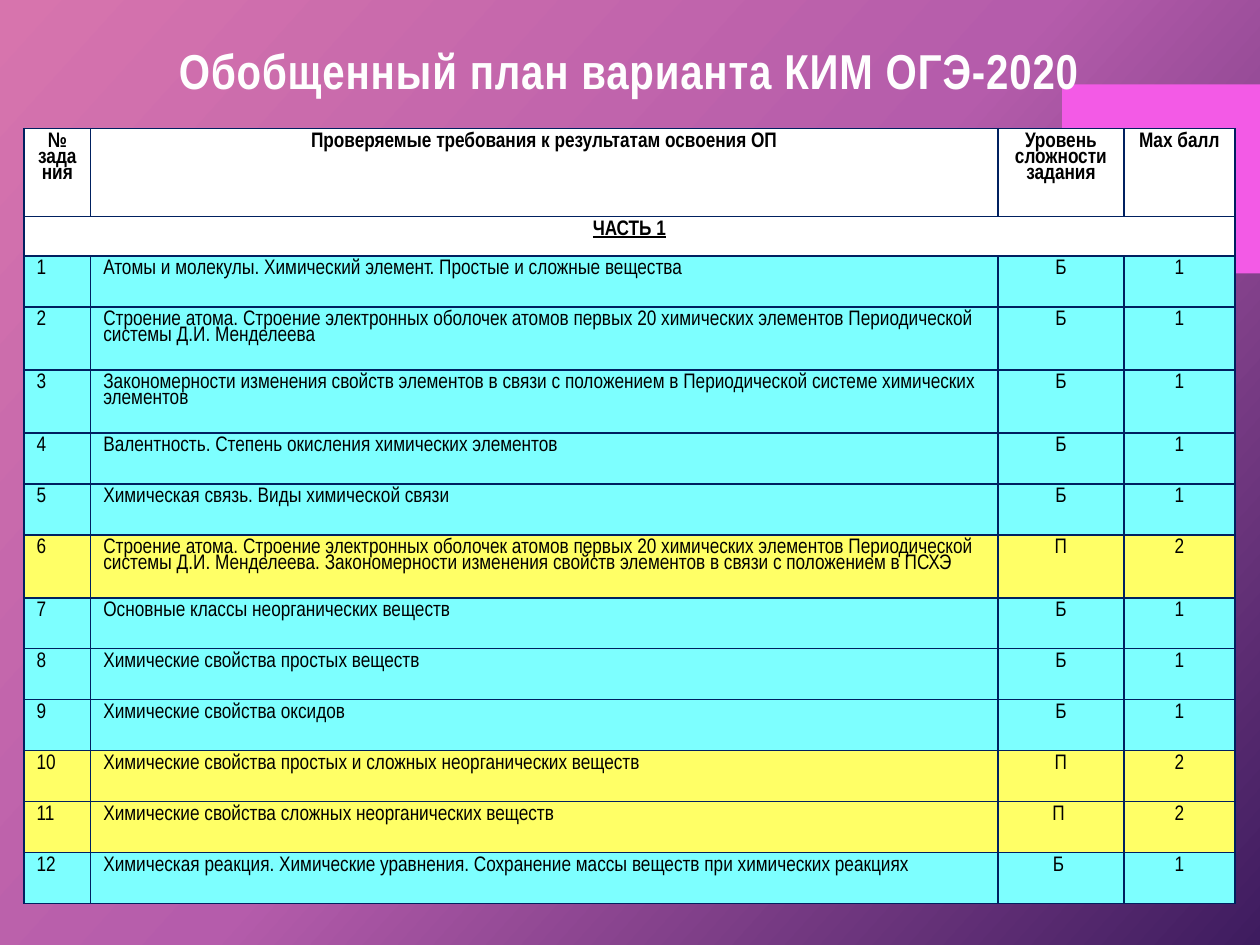
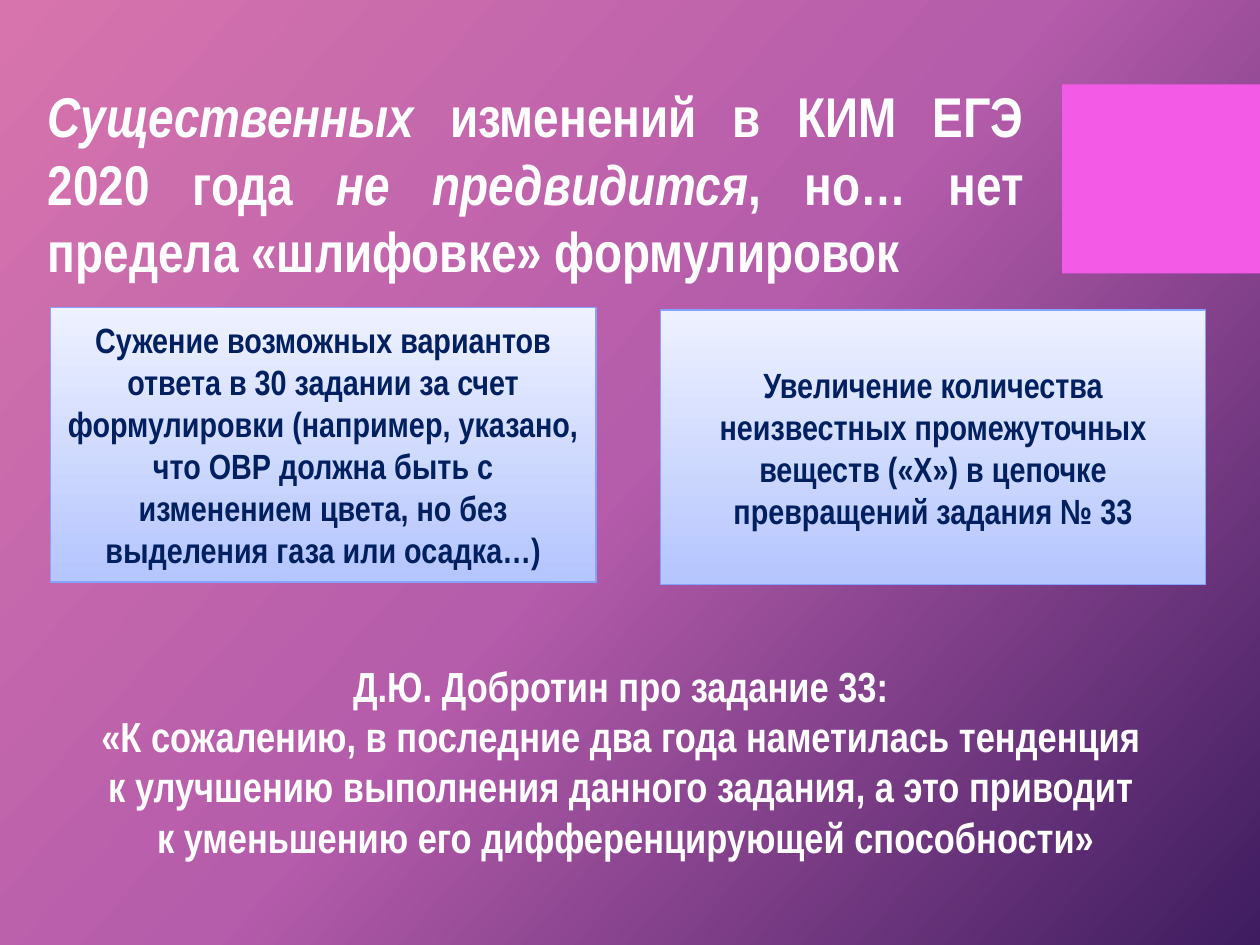
import lxml.etree
import pptx
import pptx.dml.color
import pptx.enum.shapes
import pptx.enum.text
import pptx.oxml.ns
import pptx.util

FONT = "Arial Narrow"
WHITE, BLACK, NAVY, PINK = "FFFFFF", "000000", "002060", "F35AE6"
LEVEL_FILLS = {"Б": "7DFFFF", "П": "FFFF66"}
CELL = pptx.util.Inches(0.1)

color = pptx.dml.color.RGBColor.from_string
qn = pptx.oxml.ns.qn
ALIGN = pptx.enum.text.PP_ALIGN
ANCHOR = pptx.enum.text.MSO_ANCHOR
RECTANGLE = pptx.enum.shapes.MSO_SHAPE.RECTANGLE
FIT_SHAPE = pptx.enum.text.MSO_AUTO_SIZE.SHAPE_TO_FIT_TEXT


def grid(*cells):
    return [pptx.util.Emu(round(count * CELL)) for count in cells]


def add_run(paragraph, text, size, hex_color, bold=True, italic=False):
    run = paragraph.add_run()
    run.text = text
    run.font.name = FONT
    run.font.size = pptx.util.Pt(size)
    run.font.color.rgb = color(hex_color)
    run.font.bold = bold
    run.font.italic = italic
    return run


presentation = pptx.Presentation()
presentation.slide_width, presentation.slide_height = grid(100, 75)
master = presentation.slide_master
title_layout = presentation.slide_layouts.get_by_name("Title Only")

background = master.background.fill
background.gradient()
background.gradient_angle = 360 - 42
for stop, hex_color in zip(background.gradient_stops, ("D774AD", "3E1C5F")):
    stop.color.rgb = color(hex_color)
stop_list = master.element.find(".//" + qn("a:gsLst"))
middle_stop = lxml.etree.Element(qn("a:gs"), pos="50000")
lxml.etree.SubElement(middle_stop, qn("a:srgbClr"), val="B55CAB")
stop_list.insert(1, middle_stop)

plan_slide, changes_slide = [presentation.slides.add_slide(title_layout) for _ in range(2)]

band = plan_slide.shapes.add_shape(RECTANGLE, *grid(84.3, 6.7, 15.7, 15))
band.shadow.inherit = False
band.fill.solid()
band.fill.fore_color.rgb = color(PINK)
band.line.fill.background()
master.shapes.element.insert(2, band.element)

titles = [
    (plan_slide, grid(1.9, 2.7, 96.1, 5.7), ALIGN.CENTER, 28, "FEFEFE",
     [("Обобщенный план варианта КИМ ОГЭ-2020", False)]),
    (changes_slide, grid(2.8, 6, 79.5, 17.2), ALIGN.JUSTIFY, 32, WHITE,
     [("Существенных", True), (" изменений в КИМ ЕГЭ 2020 года ", False),
      ("не предвидится", True), (", но… нет предела «шлифовке» формулировок", False)]),
]
for slide, place, alignment, size, hex_color, parts in titles:
    title = slide.shapes.title
    title.left, title.top, title.width, title.height = place
    title.text_frame.word_wrap = True
    title.text_frame.auto_size = FIT_SHAPE
    title.text_frame.vertical_anchor = ANCHOR.TOP
    paragraph = title.text_frame.paragraphs[0]
    paragraph.alignment = alignment
    for text, italic in parts:
        add_run(paragraph, text, size, hex_color, italic=italic)

plan_run = plan_slide.shapes.title.text_frame.paragraphs[0].runs[0]
plan_properties = plan_run.font._element if hasattr(plan_run.font, "_element") else plan_run._r.get_or_add_rPr()
plan_properties.set("spc", "50")
outline = lxml.etree.Element(qn("a:ln"), w="9525")
outline_fill = lxml.etree.SubElement(outline, qn("a:solidFill"))
lxml.etree.SubElement(outline_fill, qn("a:srgbClr"), val=PINK)
plan_properties.insert(0, outline)

header = ["№ задания", "Проверяемые требования к результатам освоения ОП",
          "Уровень сложности задания", "Max балл"]
tasks = [
    ("Атомы и молекулы. Химический элемент. Простые и сложные вещества", "Б", 1),
    ("Строение атома. Строение электронных оболочек атомов первых 20 химических элементов "
     "Периодической системы Д.И. Менделеева", "Б", 1),
    ("Закономерности изменения свойств элементов в связи с положением в Периодической "
     "системе химических элементов", "Б", 1),
    ("Валентность. Степень окисления химических элементов", "Б", 1),
    ("Химическая связь. Виды химической связи", "Б", 1),
    ("Строение атома. Строение электронных оболочек атомов первых 20 химических элементов "
     "Периодической системы Д.И. Менделеева. Закономерности изменения свойств элементов "
     "в связи с положением в ПСХЭ", "П", 2),
    ("Основные классы неорганических веществ", "Б", 1),
    ("Химические свойства простых веществ", "Б", 1),
    ("Химические свойства оксидов", "Б", 1),
    ("Химические свойства простых и сложных неорганических веществ", "П", 2),
    ("Химические свойства сложных неорганических веществ", "П ", 2),
    ("Химическая реакция. Химические уравнения. Сохранение массы веществ при химических "
     "реакциях", "Б ", 1),
]
rows = [header, ["ЧАСТЬ 1", "", "", ""]]
rows += [[str(number), *map(str, task)] for number, task in enumerate(tasks, 1)]
row_heights = [7, 3.1] + [5 if len(task[0]) > 100 else 4.05 for task in tasks]

table = plan_slide.shapes.add_table(len(rows), 4, *grid(1.9, 10.2, 96.1, sum(row_heights))).table
table.first_row = table.horz_banding = False
for column, width in zip(table.columns, grid(5.3, 72, 10, 8.8)):
    column.width = width
for row, height in zip(table.rows, grid(*row_heights)):
    row.height = height
table.cell(1, 0).merge(table.cell(1, 3))

for row_index, values in enumerate(rows):
    is_task = row_index > 1
    row_fill = LEVEL_FILLS[values[2].strip()] if is_task else WHITE
    for column_index, text in enumerate(values):
        cell = table.cell(row_index, column_index)
        cell_properties = cell._tc.get_or_add_tcPr()
        for side in ("a:lnL", "a:lnR", "a:lnT", "a:lnB"):
            border = lxml.etree.SubElement(cell_properties, qn(side), w="12700")
            border_fill = lxml.etree.SubElement(border, qn("a:solidFill"))
            lxml.etree.SubElement(border_fill, qn("a:srgbClr"), val=NAVY)
        cell.fill.solid()
        cell.fill.fore_color.rgb = color(row_fill)
        if text:
            paragraph = cell.text_frame.paragraphs[0]
            paragraph.line_spacing = 0.8
            paragraph.alignment = ALIGN.LEFT if is_task and column_index < 2 else ALIGN.CENTER
            run = add_run(paragraph, text, 12, BLACK, bold=not is_task)
            run.font.underline = row_index == 1

changes = [
    (4, 24.4, "Сужение возможных вариантов ответа в 30 задании за счет формулировки (например, "
     "указано, что ОВР должна быть с изменением цвета, но без выделения газа или осадка…)"),
    (52.4, 24.6, "Увеличение количества неизвестных промежуточных веществ («Х») в цепочке "
     "превращений задания № 33"),
]
for left, top, text in changes:
    card = changes_slide.shapes.add_shape(RECTANGLE, *grid(left, top, 43.3, 21.8))
    card.shadow.inherit = False
    card.fill.gradient()
    card.fill.gradient_angle = 270
    for stop, hex_color in zip(card.fill.gradient_stops, ("EEF1FF", "B5C5FE")):
        stop.color.rgb = color(hex_color)
    card.line.color.rgb = color("84A3FD")
    card.line.width = pptx.util.Pt(0.75)
    card.text_frame.word_wrap = True
    card.text_frame.vertical_anchor = ANCHOR.MIDDLE
    paragraph = card.text_frame.paragraphs[0]
    paragraph.alignment = ALIGN.CENTER
    add_run(paragraph, text, 20, NAVY)

quote_lines = [
    "Д.Ю. Добротин про задание 33: ",
    "«К сожалению, в последние два года наметилась тенденция ",
    "к улучшению выполнения данного задания, а это приводит ",
    "к уменьшению его дифференцирующей способности»",
]
quote = changes_slide.shapes.add_textbox(*grid(3.8, 51.9, 91.7, 17.2)).text_frame
quote.word_wrap = True
quote.auto_size = FIT_SHAPE
for index, text in enumerate(quote_lines):
    paragraph = quote.add_paragraph() if index else quote.paragraphs[0]
    paragraph.alignment = ALIGN.CENTER
    add_run(paragraph, text, 24, WHITE)

presentation.save("out.pptx")
